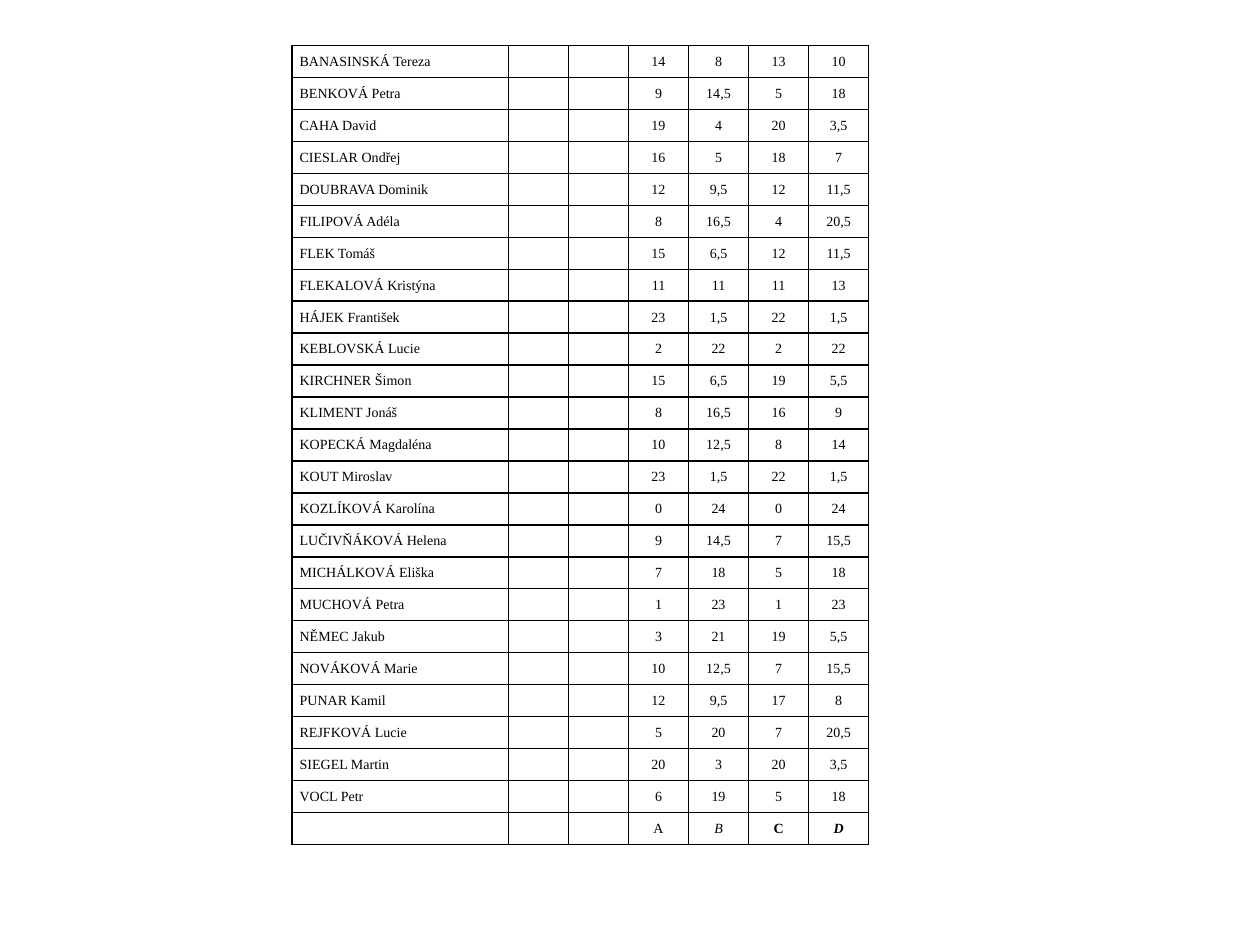
from lxml.etree import SubElement
from pptx import Presentation
from pptx.dml.color import RGBColor
from pptx.enum.text import MSO_ANCHOR, PP_ALIGN
from pptx.oxml.ns import qn
from pptx.util import Cm, Pt

RESULTS = [
    ("BANASINSKÁ Tereza", "14", "8", "13", "10"),
    ("BENKOVÁ Petra", "9", "14,5", "5", "18"),
    ("CAHA David", "19", "4", "20", "3,5"),
    ("CIESLAR Ondřej", "16", "5", "18", "7"),
    ("DOUBRAVA Dominik", "12", "9,5", "12", "11,5"),
    ("FILIPOVÁ Adéla", "8", "16,5", "4", "20,5"),
    ("FLEK Tomáš", "15", "6,5", "12", "11,5"),
    ("FLEKALOVÁ Kristýna", "11", "11", "11", "13"),
    ("HÁJEK František", "23", "1,5", "22", "1,5"),
    ("KEBLOVSKÁ Lucie", "2", "22", "2", "22"),
    ("KIRCHNER Šimon", "15", "6,5", "19", "5,5"),
    ("KLIMENT Jonáš", "8", "16,5", "16", "9"),
    ("KOPECKÁ Magdaléna", "10", "12,5", "8", "14"),
    ("KOUT Miroslav", "23", "1,5", "22", "1,5"),
    ("KOZLÍKOVÁ Karolína", "0", "24", "0", "24"),
    ("LUČIVŇÁKOVÁ Helena", "9", "14,5", "7", "15,5"),
    ("MICHÁLKOVÁ Eliška", "7", "18", "5", "18"),
    ("MUCHOVÁ Petra", "1", "23", "1", "23"),
    ("NĚMEC Jakub", "3", "21", "19", "5,5"),
    ("NOVÁKOVÁ Marie", "10", "12,5", "7", "15,5"),
    ("PUNAR Kamil", "12", "9,5", "17", "8"),
    ("REJFKOVÁ Lucie", "5", "20", "7", "20,5"),
    ("SIEGEL Martin", "20", "3", "20", "3,5"),
    ("VOCL Petr", "6", "19", "5", "18"),
    ("", "A", "B", "C", "D"),
]
ITALIC_LABELS = ("B", "D")
BOLD_LABELS = ("C", "D")
COLUMN_WIDTHS = [Cm(4.36)] + [Cm(1.21)] * 6
TABLE_LEFT, TABLE_TOP, TABLE_HEIGHT = Cm(5.89), Cm(0.92), Cm(16.1)
BLACK = RGBColor(0, 0, 0)
FONT_NAME = "Times New Roman"
FONT_SIZE = Pt(8)


def draw_borders(cell):
    """Draw a thin black line on every side of the cell."""
    properties = cell._tc.get_or_add_tcPr()
    for side in ("a:lnL", "a:lnR", "a:lnT", "a:lnB"):
        line = SubElement(properties, qn(side), w=str(Pt(1)))
        fill = SubElement(line, qn("a:solidFill"))
        SubElement(fill, qn("a:srgbClr"), val=str(BLACK))


def fill_cell(cell, text, is_name):
    """Write and format one cell of the results table."""
    draw_borders(cell)
    cell.fill.background()
    cell.vertical_anchor = MSO_ANCHOR.MIDDLE
    cell.margin_left = cell.margin_right = Cm(0.15)
    cell.margin_top = cell.margin_bottom = 0
    paragraph = cell.text_frame.paragraphs[0]
    if not text:
        SubElement(paragraph._p, qn("a:endParaRPr"), sz=str(int(FONT_SIZE.pt * 100)))
        return
    paragraph.text = text
    if is_name:
        paragraph.space_before = paragraph.space_after = Pt(1.1)
    else:
        paragraph.alignment = PP_ALIGN.CENTER
    font = paragraph.runs[0].font
    font.name, font.size = FONT_NAME, FONT_SIZE
    font.color.rgb = BLACK
    font.italic = text in ITALIC_LABELS
    font.bold = text in BOLD_LABELS


def main():
    """Build the slide with the table of results."""
    presentation = Presentation()
    presentation.slide_width, presentation.slide_height = Cm(25.4), Cm(19.05)
    slide = presentation.slides.add_slide(presentation.slide_layouts[6])
    table = slide.shapes.add_table(
        len(RESULTS), len(COLUMN_WIDTHS),
        TABLE_LEFT, TABLE_TOP, sum(COLUMN_WIDTHS), TABLE_HEIGHT,
    ).table
    table.first_row = table.horz_banding = False
    for column, width in zip(table.columns, COLUMN_WIDTHS):
        column.width = width
    for row, (name, *values) in zip(table.rows, RESULTS):
        for index, text in enumerate([name, "", "", *values]):
            fill_cell(row.cells[index], text, index == 0)
    presentation.save("out.pptx")


if __name__ == "__main__":
    main()
